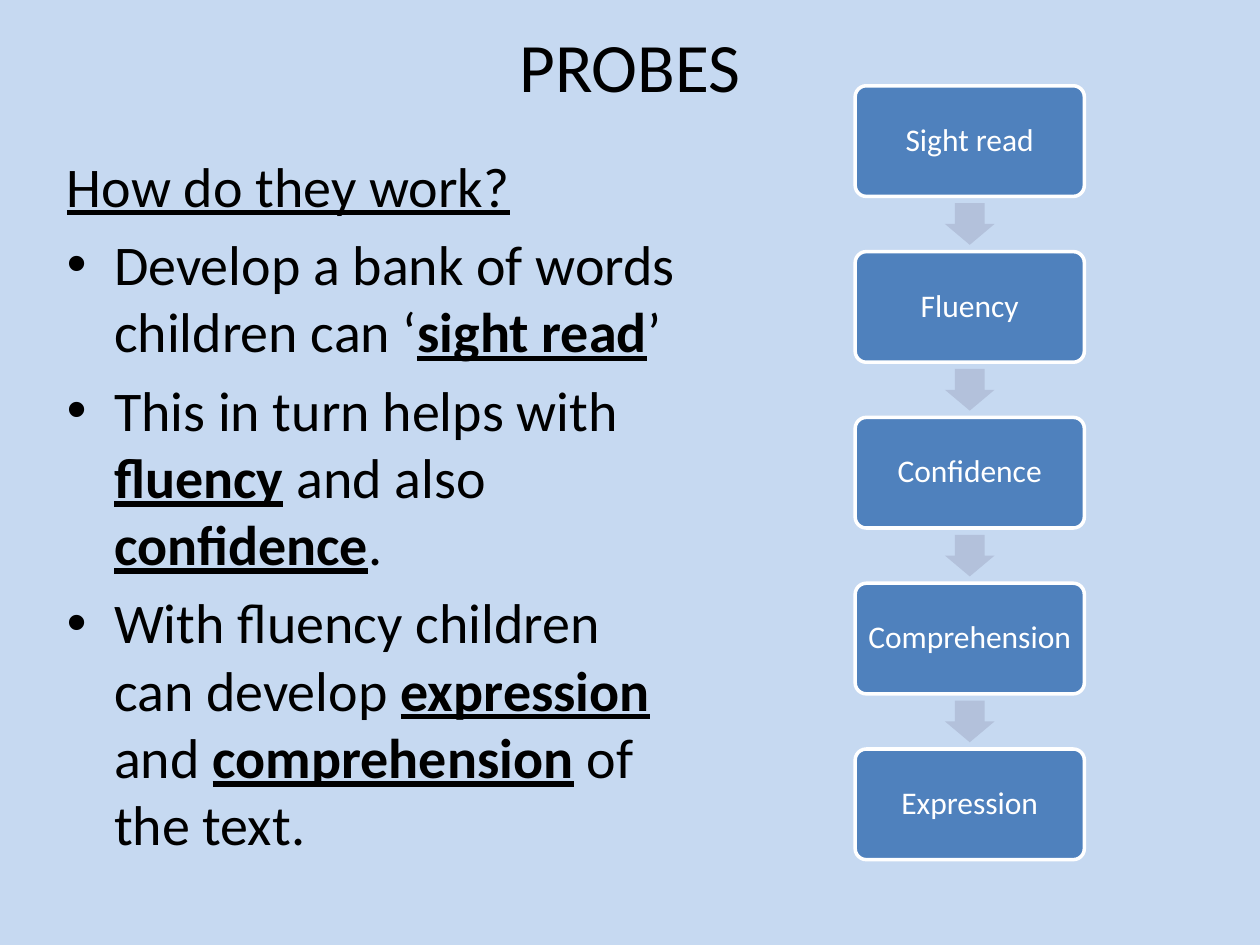
from pptx import Presentation
from pptx.dml.color import RGBColor
from pptx.enum.shapes import MSO_SHAPE
from pptx.enum.text import MSO_ANCHOR, PP_ALIGN
from pptx.oxml.ns import qn
from pptx.util import Cm, Pt

BACKGROUND = RGBColor(0xC6, 0xD9, 0xF1)
BLUE = RGBColor(0x4F, 0x81, 0xBD)
ARROW = RGBColor(0xB3, 0xC1, 0xDB)
WHITE = RGBColor(0xFF, 0xFF, 0xFF)
BLACK = RGBColor(0, 0, 0)
FONT = "Calibri"

HEADING = "How do they work?"
# Every second piece of a bullet is a key word.
BULLETS = [
    ["Develop a bank of words children can ‘", "sight read", "’"],
    ["This in turn helps with ", "fluency", " and also ", "confidence", "."],
    ["With fluency children can develop ", "expression", " and ",
     "comprehension", " of the text."],
]
STEPS = ["Sight read", "Fluency", "Confidence", "Comprehension", "Expression"]


def format_run(r, size, color, bold=False, underline=False):
    r.font.name = FONT
    r.font.size = Pt(size)
    r.font.color.rgb = color
    r.font.bold = bold
    r.font.underline = underline


def set_margins(tf, margin):
    tf.margin_left = tf.margin_right = margin
    tf.margin_top = tf.margin_bottom = margin


def add_bullet(p, indent):
    pPr = p._p.get_or_add_pPr()
    pPr.set("marL", str(indent))
    pPr.set("indent", str(-indent))
    font = pPr.makeelement(qn("a:buFont"), {"typeface": "Arial"})
    char = pPr.makeelement(qn("a:buChar"), {"char": "•"})
    pPr.extend([font, char])


def add_title(s, left, top, width, height):
    tf = s.shapes.add_textbox(left, top, width, height).text_frame
    tf.word_wrap = True
    tf.vertical_anchor = MSO_ANCHOR.MIDDLE
    set_margins(tf, 0)
    p = tf.paragraphs[0]
    p.text = "PROBES"
    p.alignment = PP_ALIGN.CENTER
    format_run(p.runs[0], 39.6, BLACK)


def add_body(s, left, top, width, height):
    tf = s.shapes.add_textbox(left, top, width, height).text_frame
    tf.word_wrap = True
    p = tf.paragraphs[0]
    p.text = HEADING
    format_run(p.runs[0], 32, BLACK, underline=True)
    for pieces in BULLETS:
        p = tf.add_paragraph()
        p.space_before = Pt(6.4)
        add_bullet(p, Cm(0.95))
        for i, piece in enumerate(pieces):
            r = p.add_run()
            r.text = piece
            is_key = i % 2 == 1
            format_run(r, 32, BLACK, bold=is_key, underline=is_key)


def add_step(s, text, left, top, width, height):
    sp = s.shapes.add_shape(MSO_SHAPE.ROUNDED_RECTANGLE, left, top, width, height)
    sp.adjustments[0] = 0.1
    sp.shadow.inherit = False
    sp.fill.solid()
    sp.fill.fore_color.rgb = BLUE
    sp.line.color.rgb = WHITE
    sp.line.width = Pt(2)
    tf = sp.text_frame
    tf.word_wrap = True
    tf.vertical_anchor = MSO_ANCHOR.MIDDLE
    set_margins(tf, Cm(0.1))
    p = tf.paragraphs[0]
    p.text = text
    p.alignment = PP_ALIGN.CENTER
    p.line_spacing = 0.9
    format_run(p.runs[0], 18, WHITE)


def add_arrow(s, center_x, center_y):
    width, height = Cm(1), Cm(0.84)
    sp = s.shapes.add_shape(MSO_SHAPE.DOWN_ARROW, center_x - width // 2,
                            center_y - height // 2, width, height)
    sp.adjustments[0] = 0.6
    sp.adjustments[1] = 0.5
    sp.shadow.inherit = False
    sp.fill.solid()
    sp.fill.fore_color.rgb = ARROW
    sp.line.fill.background()


def add_process(s, left, top, width, height):
    """Stack the steps evenly, with an arrow in each gap."""
    step_height = Cm(2.23)
    pitch = (height - step_height) // (len(STEPS) - 1)
    gap = pitch - step_height
    for i, text in enumerate(STEPS):
        y = top + i * pitch
        if i:
            add_arrow(s, left + width // 2, y - gap // 2)
        add_step(s, text, left, y, width, step_height)


def main():
    prs = Presentation()
    prs.slide_width, prs.slide_height = Cm(25.4), Cm(19.05)
    s = prs.slides.add_slide(prs.slide_layouts[6])
    s.background.fill.solid()
    s.background.fill.fore_color.rgb = BACKGROUND
    add_title(s, Cm(1.27), Cm(0.45), Cm(22.86), Cm(1.7))
    add_body(s, Cm(1.1), Cm(2.92), Cm(13), Cm(13.8))
    add_process(s, Cm(17.24), Cm(1.73), Cm(4.62), Cm(15.6))
    prs.save("out.pptx")


if __name__ == "__main__":
    main()
